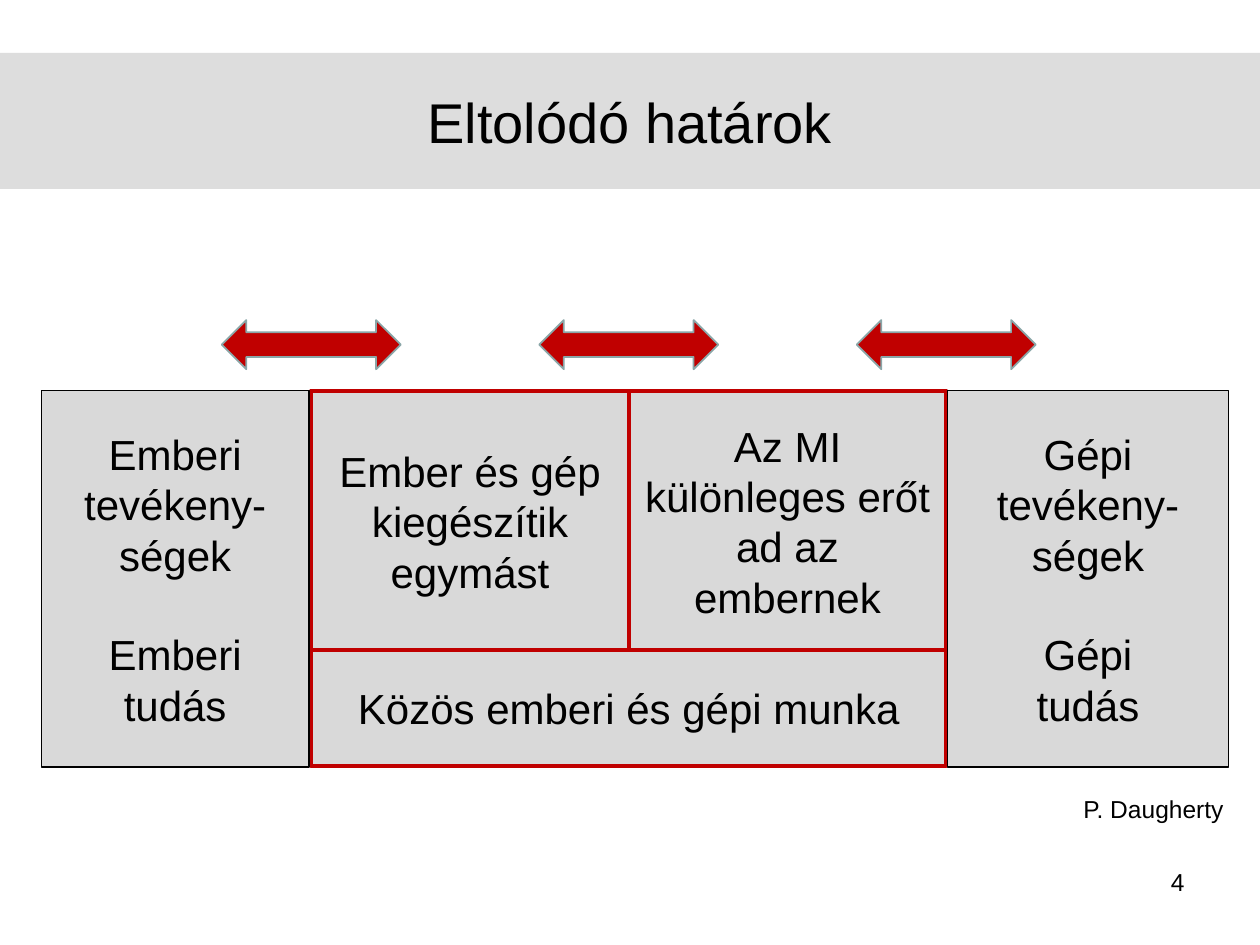
"""Builds the slide on shifting borders between human and machine work."""
import pptx
import pptx.dml.color
import pptx.enum.shapes
import pptx.enum.text
import pptx.util

Inches = pptx.util.Inches
Pt = pptx.util.Pt
MSO_SHAPE = pptx.enum.shapes.MSO_SHAPE
PP_ALIGN = pptx.enum.text.PP_ALIGN
MSO_ANCHOR = pptx.enum.text.MSO_ANCHOR


def rgb(value):
    return pptx.dml.color.RGBColor.from_string(value)


class SlideBuilder:
    FONT = "Arial"
    TEXT = "000000"
    GREY = "D9D9D9"
    RED = "C00000"

    def __init__(self, slide):
        self.s = slide

    def set_text(self, sp, paragraphs, size, align, wrap=True, gap_at=None):
        tf = sp.text_frame
        tf.word_wrap = wrap
        for i, text in enumerate(paragraphs):
            p = tf.paragraphs[0] if i == 0 else tf.add_paragraph()
            p.text = text
            p.alignment = align
            p.font.name = self.FONT
            p.font.size = Pt(size)
            p.font.color.rgb = rgb(self.TEXT)
            if i == gap_at:
                p.space_before = Pt(28)

    def shape(self, kind, box, fill, line=None, width=1):
        sp = self.s.shapes.add_shape(kind, *map(Inches, box))
        sp.shadow.inherit = False
        sp.fill.solid()
        sp.fill.fore_color.rgb = rgb(fill)
        if line:
            sp.line.color.rgb = rgb(line)
            sp.line.width = Pt(width)
        else:
            sp.line.fill.background()
        return sp

    def title(self, text):
        sp = self.shape(MSO_SHAPE.RECTANGLE, (0, 0.42, 10, 1.08), "DDDDDD")
        sp.text_frame.vertical_anchor = MSO_ANCHOR.MIDDLE
        self.set_text(sp, [text], 32, PP_ALIGN.CENTER, wrap=False)

    def box(self, box, paragraphs, line, width, gap_at=None):
        sp = self.shape(MSO_SHAPE.RECTANGLE, box, self.GREY, line, width)
        sp.text_frame.vertical_anchor = MSO_ANCHOR.MIDDLE
        self.set_text(sp, paragraphs, 24, PP_ALIGN.CENTER, gap_at=gap_at)

    def shared_box(self, box, text):
        self.box(box, [text], self.RED, 2.25)

    def side_box(self, left, width, paragraphs):
        self.box((left, 3.1, width, 2.99), paragraphs, self.TEXT, 1, gap_at=len(paragraphs) - 2)

    def arrow(self, center):
        width = 1.42
        self.shape(MSO_SHAPE.LEFT_RIGHT_ARROW, (center - width / 2, 2.54, width, 0.39),
                   self.RED, "8AA6A8")

    def label(self, box, text, align, wrap=True):
        sp = self.s.shapes.add_textbox(*map(Inches, box))
        self.set_text(sp, [text], 14, align, wrap)


def main():
    prs = pptx.Presentation()
    prs.slide_width = Inches(10)
    prs.slide_height = Inches(7.5)
    b = SlideBuilder(prs.slides.add_slide(prs.slide_layouts[6]))

    b.title("Eltolódó határok")

    left, top, width, height = 2.47, 3.1, 2.52, 2.07
    shared = ["Ember és gép kiegészítik egymást", "Az MI különleges erőt ad az embernek"]
    for i, text in enumerate(shared):
        b.shared_box((left + i * width, top, width, height), text)
    b.shared_box((left, 5.16, 2 * width, 0.92), "Közös emberi és gépi munka")

    human = ["Emberi", "tevékeny-ségek", "Emberi", "tudás"]
    machine = ["Gépi", "tevékeny-ségek", "Gépi", "tudás"]
    b.side_box(0.33, 2.12, human)
    b.side_box(7.52, 2.23, machine)

    for i in range(3):
        b.arrow(left + i * width)

    b.label((8.5, 6.25, 1.32, 0.34), "P. Daugherty", PP_ALIGN.LEFT, wrap=False)
    b.label((7.17, 6.83, 2.33, 0.52), "4", PP_ALIGN.RIGHT)

    prs.save("out.pptx")


if __name__ == "__main__":
    main()
